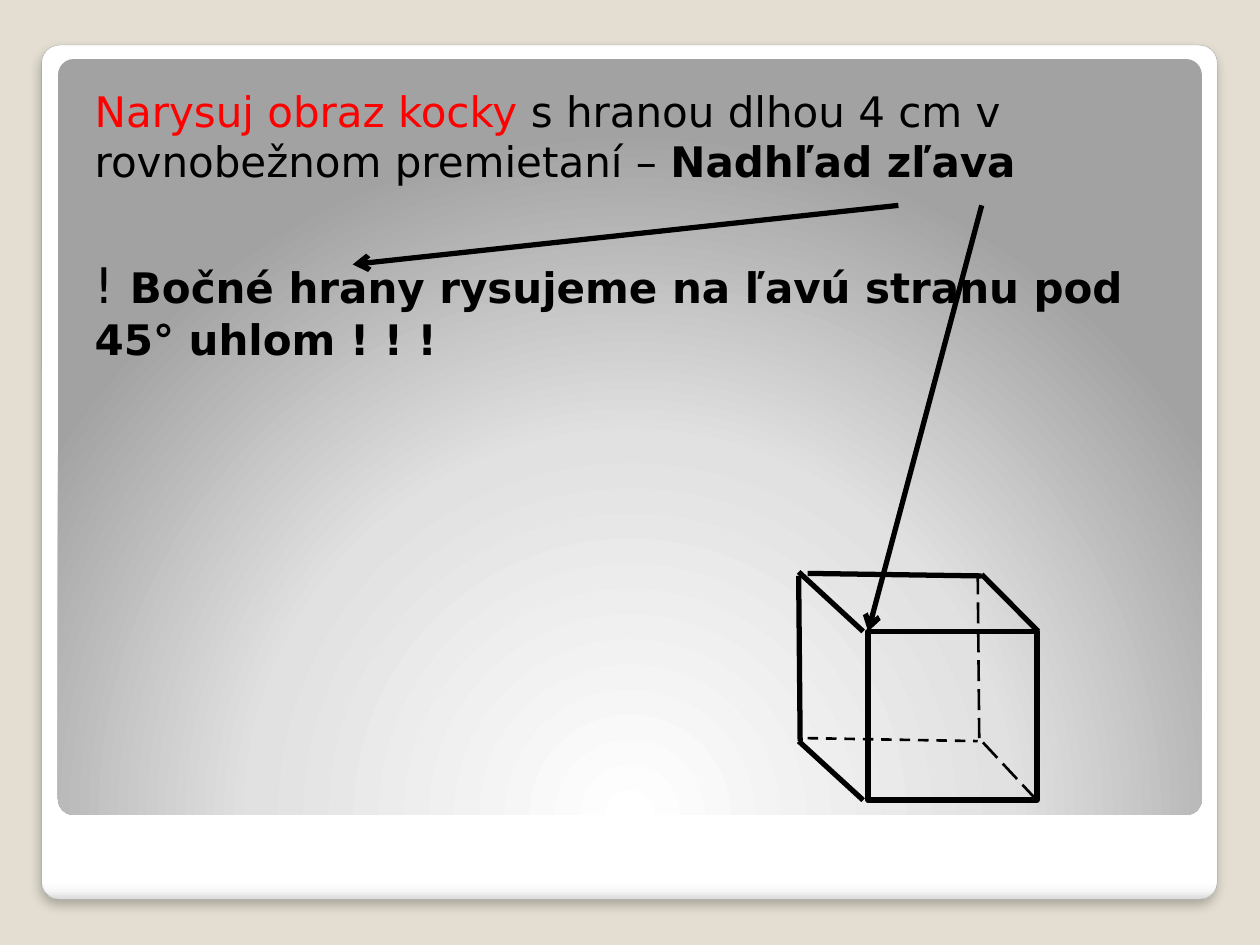
import pptx
import pptx.dml.color
import pptx.enum.dml
import pptx.enum.shapes
import pptx.oxml
import pptx.oxml.ns
import pptx.util
from pptx.util import Cm, Pt

FONT = "DejaVu Sans"
BLACK = "000000"
RED = "FF0000"
DASH = pptx.enum.dml.MSO_LINE.DASH
LONG_DASH = pptx.enum.dml.MSO_LINE.LONG_DASH
NAMESPACE = pptx.oxml.ns.nsdecls("a")


def color(value):
    return pptx.dml.color.RGBColor.from_string(value)


def set_gradient(shape, stops, direction):
    """Fill with (percent, colour) stops; direction is the a:lin or a:path XML."""
    stop_xml = "".join(
        f'<a:gs pos="{percent * 1000}"><a:srgbClr val="{value}"/></a:gs>'
        for percent, value in stops)
    gradient = pptx.oxml.parse_xml(
        f'<a:gradFill {NAMESPACE} rotWithShape="1">'
        f'<a:gsLst>{stop_xml}</a:gsLst>{direction}</a:gradFill>')
    shape.element.spPr.find(pptx.oxml.ns.qn("a:prstGeom")).addnext(gradient)


def add_panel(slide, left, top, width, height, stops, direction):
    shape = slide.shapes.add_shape(
        pptx.enum.shapes.MSO_SHAPE.ROUNDED_RECTANGLE,
        Cm(left), Cm(top), Cm(width), Cm(height))
    shape.adjustments[0] = 0.021
    shape.shadow.inherit = False
    set_gradient(shape, stops, direction)
    shape.line.fill.background()
    return shape


def add_frame(slide, left, top, width, height):
    """White card with a soft shadow, and the grey panel inside it."""
    card = add_panel(
        slide, left, top, width, height,
        [(0, "FFFFFF"), (98, "FFFFFF"), (99, "F7F7F7"), (100, "DADADA")],
        '<a:lin ang="5400000" scaled="0"/>')
    card.line.color.rgb = color("A4A4A4")
    card.line.width = Pt(0.16)
    effects = card.element.spPr.find(pptx.oxml.ns.qn("a:effectLst"))
    effects.append(pptx.oxml.parse_xml(
        f'<a:outerShdw {NAMESPACE} blurRad="{Pt(6)}" dist="{Pt(4)}" '
        'dir="5400000" algn="t" rotWithShape="0"><a:srgbClr val="000000">'
        '<a:alpha val="25000"/></a:srgbClr></a:outerShdw>'))
    add_panel(
        slide, left + 0.33, top + 0.28, width - 0.64, height - 1.98,
        [(0, "FFFFFF"), (55, "E1E1E1"), (100, "A2A2A2")],
        '<a:path path="circle"><a:fillToRect l="50000" t="175000" '
        'r="50000" b="-75000"/></a:path>')


def add_task(slide, left, top, width, height):
    box = slide.shapes.add_textbox(Cm(left), Cm(top), Cm(width), Cm(height))
    frame = box.text_frame
    frame.word_wrap = True
    frame.margin_left, frame.margin_top = Cm(0.51), Cm(0.25)
    frame.margin_right, frame.margin_bottom = Cm(0.25), Cm(0.13)
    paragraphs = [
        (2.5, [("Narysuj obraz kocky ", 24, RED, False),
               ("s hranou dlhou 4 cm v rovnobežnom premietaní – ", 24, BLACK, False),
               ("Nadhľad zľava", 24, BLACK, True)]),
        (39, [("! ", 28, BLACK, False),
              ("Bočné hrany rysujeme na ľavú stranu pod 45° uhlom ! ! !",
               24, BLACK, True)]),
    ]
    for index, (space_before, runs) in enumerate(paragraphs):
        paragraph = frame.add_paragraph() if index else frame.paragraphs[0]
        paragraph.space_before = Pt(space_before)
        for text, size, text_color, bold in runs:
            run = paragraph.add_run()
            run.text = text
            run.font.name = FONT
            run.font.size = Pt(size)
            run.font.bold = bold
            run.font.color.rgb = color(text_color)


def add_line(slide, start, end, width=3, dash=None, arrow=False):
    connector = slide.shapes.add_connector(
        pptx.enum.shapes.MSO_CONNECTOR.STRAIGHT,
        *(Cm(value) for value in start + end))
    connector.line.color.rgb = color(BLACK)
    connector.line.width = Pt(width)
    if dash:
        connector.line.dash_style = dash
    if arrow:
        connector.line._get_or_add_ln().append(
            pptx.oxml.parse_xml(f'<a:tailEnd {NAMESPACE} type="arrow"/>'))
    connector.element.spPr.append(
        pptx.oxml.parse_xml(f"<a:effectLst {NAMESPACE}/>"))


def add_cube(slide, left, top, side):
    """Cube seen from above left; hidden edges are dashed."""
    front = slide.shapes.add_shape(
        pptx.enum.shapes.MSO_SHAPE.RECTANGLE,
        Cm(left + 1.4), Cm(top + 1.2), Cm(side), Cm(side))
    front.shadow.inherit = False
    front.fill.background()
    front.line.color.rgb = color(BLACK)
    front.line.width = Pt(3.35)

    edges = [
        ((1.3, 4.6), (0, 3.41), 3, None),
        ((1.3, 1.2), (0, 0), 3, None),
        ((4.83, 1.2), (3.69, 0.05), 3, None),
        ((4.8, 4.6), (3.69, 3.41), 1.5, LONG_DASH),
        ((0, 0.08), (0.03, 3.41), 3, None),
        ((3.61, 0.03), (3.64, 3.35), 1.5, LONG_DASH),
        ((0.18, 3.35), (3.61, 3.41), 1.5, DASH),
        ((0.18, 0.03), (3.69, 0.08), 3, None),
    ]
    for start, end, width, dash in edges:
        add_line(slide, (left + start[0], top + start[1]),
                 (left + end[0], top + end[1]), width, dash)


def main():
    presentation = pptx.Presentation()
    presentation.slide_width = Cm(25.4)
    presentation.slide_height = Cm(19.05)
    slide = presentation.slides.add_slide(presentation.slide_layouts[6])
    slide.background.fill.solid()
    slide.background.fill.fore_color.rgb = color("E3DED1")

    add_frame(slide, 0.84, 0.91, 23.7, 17.22)
    add_task(slide, 1.4, 1.47, 22.73, 16.46)
    add_line(slide, (18.11, 4.14), (7.11, 5.33), arrow=True)
    add_line(slide, (19.79, 4.14), (17.5, 12.73), arrow=True)
    add_cube(slide, 16.1, 11.53, 3.4)
    presentation.save("out.pptx")


if __name__ == "__main__":
    main()
